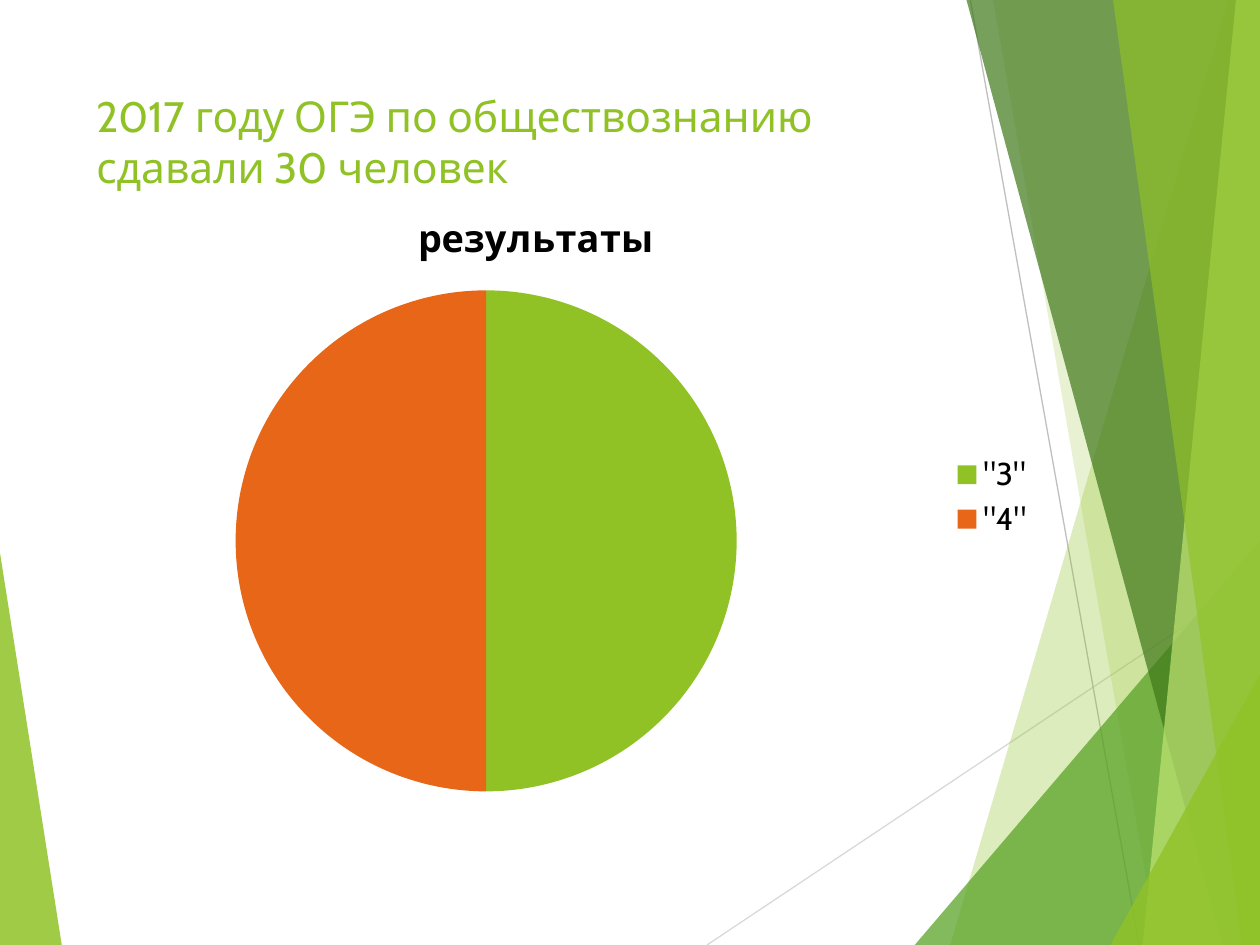
import pptx
import pptx.chart.data
import pptx.dml.color
import pptx.enum.chart
import pptx.enum.shapes
import pptx.enum.text
import pptx.oxml.ns
import pptx.oxml.xmlchemy
import pptx.util

Pt = pptx.util.Pt
WIDE, HIGH = 720, 540


def tint(code):
    return pptx.dml.color.RGBColor.from_string(code)


class Deck:
    font = "Cabin"
    main = "90C226"
    dark = "000000"

    def __init__(self):
        self.file = pptx.Presentation()
        self.file.slide_width = Pt(WIDE)
        self.file.slide_height = Pt(HIGH)
        self.slide = self.file.slides.add_slide(self.file.slide_layouts[6])
        self.shapes = self.slide.shapes

    def style(self, font, size, code, bold=False):
        font.name = self.font
        font.size = Pt(size)
        font.bold = bold
        font.color.rgb = tint(code)

    def shard(self, code, alpha, points):
        spots = [(Pt(x), Pt(y)) for x, y in points]
        pen = self.shapes.build_freeform(*spots[0])
        pen.add_line_segments(spots[1:], close=True)
        shape = pen.convert_to_shape()
        shape.shadow.inherit = False
        shape.line.fill.background()
        shape.fill.solid()
        shape.fill.fore_color.rgb = tint(code)
        color = shape._element.spPr.find(".//" + pptx.oxml.ns.qn("a:srgbClr"))
        node = pptx.oxml.xmlchemy.OxmlElement("a:alpha")
        node.set("val", str(alpha * 1000))
        color.append(node)

    def line(self, code, start, end):
        kind = pptx.enum.shapes.MSO_CONNECTOR.STRAIGHT
        ends = [Pt(v) for v in start + end]
        line = self.shapes.add_connector(kind, *ends)
        line.line.color.rgb = tint(code)
        line.line.width = Pt(0.75)
        blank = pptx.oxml.xmlchemy.OxmlElement("a:effectLst")
        line._element.spPr.append(blank)

    def title(self, text, box):
        frame = self.shapes.add_textbox(*[Pt(v) for v in box]).text_frame
        frame.word_wrap = True
        frame.vertical_anchor = pptx.enum.text.MSO_ANCHOR.TOP
        frame.text = text
        self.style(frame.paragraphs[0].runs[0].font, 24.3, self.main)

    def pie(self, name, parts, box):
        data = pptx.chart.data.CategoryChartData()
        data.categories = [label for label, _, _ in parts]
        data.add_series(name, [value for _, value, _ in parts])
        kind = pptx.enum.chart.XL_CHART_TYPE.PIE
        chart = self.shapes.add_chart(kind, *[Pt(v) for v in box], data).chart
        self.style(chart.font, 18, self.dark)
        chart.has_title = True
        head = chart.chart_title.text_frame
        head.text = name
        self.style(head.paragraphs[0].runs[0].font, 21.6, self.dark, True)
        chart.has_legend = True
        chart.legend.position = pptx.enum.chart.XL_LEGEND_POSITION.RIGHT
        chart.legend.include_in_layout = False
        self.style(chart.legend.font, 18, self.dark)
        plot = chart.plots[0]
        plot.vary_by_categories = True
        for i, (_, _, code) in enumerate(parts):
            fill = plot.series[0].points[i].format.fill
            fill.solid()
            fill.fore_color.rgb = tint(code)


def main():
    deck = Deck()
    deck.shard(deck.main, 85, [(0, 316), (35.3, HIGH), (0, HIGH)])
    deck.line("D9D9D9", (404, HIGH), (WIDE, 329))
    deck.line("BFBFBF", (554.5, 0), (651, HIGH))

    blades = [
        (deck.main, 30, (702, 0), 543),
        (deck.main, 20, (567.5, 0), 661.5),
        ("54A021", 72, (WIDE, 309), 522.7),
        ("3F7819", 70, (552.3, 0), 698.5),
        ("C0E474", 70, (706.3, 0), 653),
        (deck.main, 65, (636, 0), 710),
        (deck.main, 80, (WIDE, 385.5), 634.5),
    ]
    for code, alpha, tip, foot in blades:
        deck.shard(code, alpha,
                   [tip, (foot, HIGH), (WIDE, HIGH), (WIDE, tip[1])])

    deck.title("2017 году ОГЭ по обществознанию сдавали 30 человек",
               (48, 48, 500, 104))
    deck.pie("результаты", [('"3"', 50, deck.main), ('"4"', 50, "E76618")],
             (14.4, 105.8, 584, 356.4))
    deck.file.save("out.pptx")


if __name__ == "__main__":
    main()
